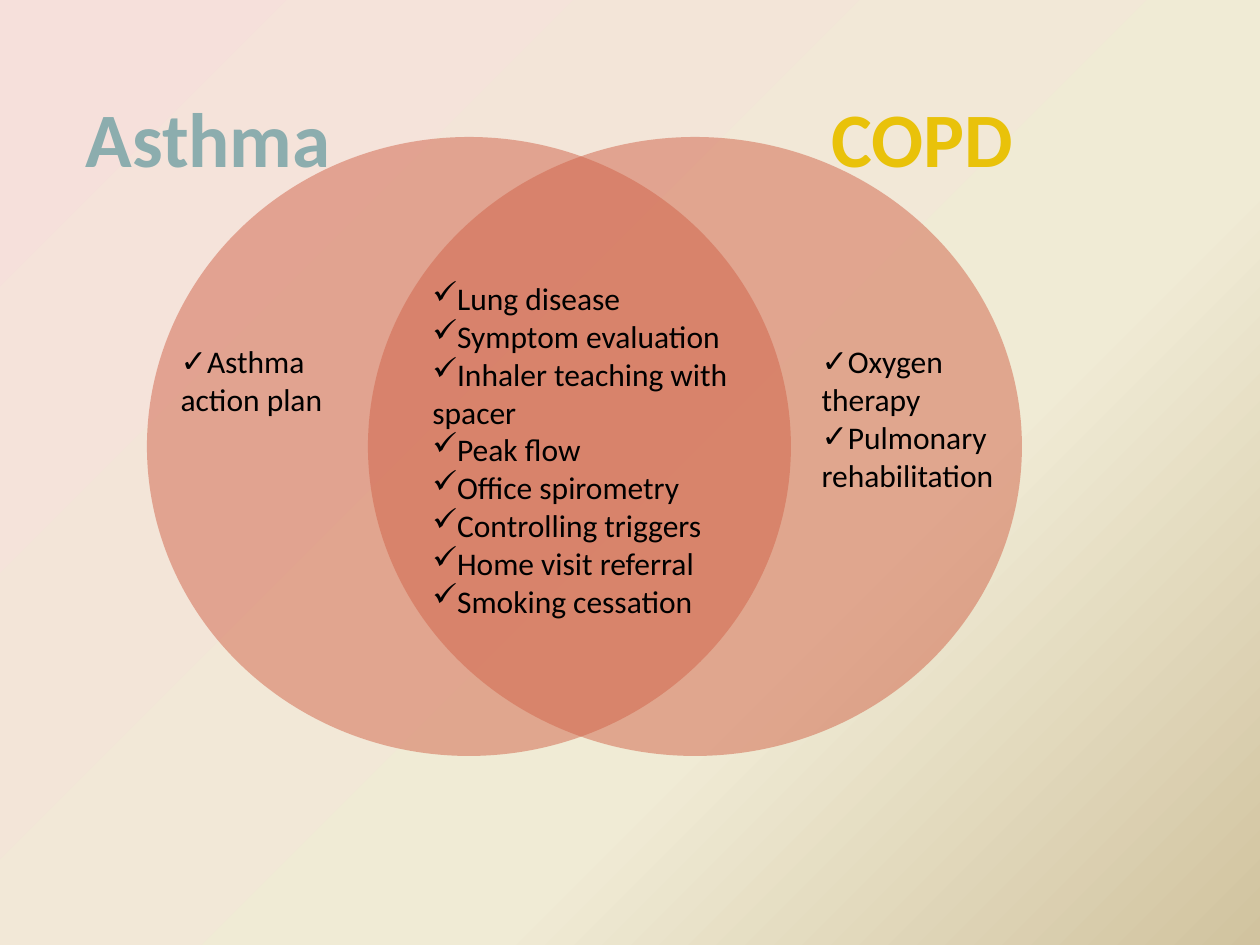
from copy import deepcopy
from dataclasses import dataclass

from lxml import etree
from pptx import Presentation
from pptx.dml.color import RGBColor
from pptx.enum import shapes, text
from pptx.oxml.ns import qn
from pptx.util import Emu, Pt

EMU_PER_PX = 914400 / 126
BLACK = RGBColor(0x00, 0x00, 0x00)
TEAL = RGBColor(0x8C, 0xAD, 0xAE)
GOLD = RGBColor(0xE9, 0xC2, 0x0A)
TERRACOTTA = RGBColor(0xD1, 0x63, 0x49)
BACKDROP = (
    (0, RGBColor(0xF6, 0xE0, 0xDB)),
    (0.65, RGBColor(0xF0, 0xEB, 0xD5)),
    (1, RGBColor(0xD1, 0xC3, 0x9F)),
)


@dataclass(frozen=True)
class Box:
    left: int
    top: int
    width: int
    height: int

    def emu(self) -> list[Emu]:
        lengths = (self.left, self.top, self.width, self.height)
        return [Emu(round(px * EMU_PER_PX)) for px in lengths]


@dataclass(frozen=True)
class Topic:
    circle: Box
    heading: str
    heading_box: Box
    color: RGBColor
    points: tuple[str, ...]
    points_box: Box
    heading_idx: int
    points_idx: int


TOPICS = (
    Topic(Box(147, 137, 644, 619), "Asthma", Box(73, 84, 294, 106), TEAL,
          ("Asthma action plan",), Box(168, 336, 179, 89), 1, 2),
    Topic(Box(368, 137, 654, 619), "COPD", Box(819, 84, 294, 106), GOLD,
          ("Oxygen therapy", "Pulmonary rehabilitation"),
          Box(809, 336, 199, 165), 3, 4),
)
SHARED_POINTS = (
    "Lung disease", "Symptom evaluation", "Inhaler teaching with spacer",
    "Peak flow", "Office spirometry", "Controlling triggers",
    "Home visit referral", "Smoking cessation",
)
SHARED_BOX = Box(420, 273, 325, 357)


def paint_background(slide) -> None:
    fill = slide.background.fill
    fill.gradient()
    stop_list = slide.element.xpath(".//a:gsLst")[0]
    stop_list.append(deepcopy(stop_list[0]))
    for stop, (position, color) in zip(fill.gradient_stops, BACKDROP):
        stop.position = position
        stop.color.rgb = color
    fill.gradient_angle = 315


def draw_circle(slide, box: Box, layer: int) -> None:
    circle = slide.shapes.add_shape(shapes.MSO_SHAPE.OVAL, *box.emu())
    circle.shadow.inherit = False
    circle.fill.solid()
    circle.fill.fore_color.rgb = TERRACOTTA
    circle.line.fill.background()
    tint = circle.element.spPr.find(f"{qn('a:solidFill')}/{qn('a:srgbClr')}")
    etree.SubElement(tint, qn("a:alpha"), val="50000")
    slide.shapes.element.insert(2 + layer, circle.element)


def write(holder, box: Box, lines: tuple[str, ...], *, size: int = 18,
          color: RGBColor = BLACK, bold: bool = False,
          bullet: str = "") -> None:
    holder.left, holder.top, holder.width, holder.height = box.emu()
    frame = holder.text_frame
    frame.text = "\n".join(lines)
    frame.word_wrap = True
    frame.auto_size = text.MSO_AUTO_SIZE.SHAPE_TO_FIT_TEXT
    frame.vertical_anchor = text.MSO_ANCHOR.TOP
    for paragraph in frame.paragraphs:
        paragraph.alignment = text.PP_ALIGN.LEFT
        paragraph.space_before = paragraph.space_after = Pt(0)
        properties = paragraph._p.get_or_add_pPr()
        properties.set("marL", "0")
        properties.set("indent", "0")
        if bullet:
            etree.SubElement(properties, qn("a:buChar"), char=bullet)
        else:
            etree.SubElement(properties, qn("a:buNone"))
        for run in paragraph.runs:
            run.font.name = "Calibri"
            run.font.size = Pt(size)
            run.font.bold = bold
            run.font.color.rgb = color


def main() -> None:
    deck = Presentation()
    deck.slide_width, deck.slide_height = Box(0, 0, 1260, 945).emu()[2:]
    slide = deck.slides.add_slide(deck.slide_layouts.get_by_name("Comparison"))
    paint_background(slide)
    unused_title = slide.shapes.title.element
    unused_title.getparent().remove(unused_title)
    holders = {holder.placeholder_format.idx: holder
               for holder in slide.placeholders}
    for layer, topic in enumerate(TOPICS):
        draw_circle(slide, topic.circle, layer)
        write(holders[topic.heading_idx], topic.heading_box, (topic.heading,),
              size=44, color=topic.color, bold=True)
        write(holders[topic.points_idx], topic.points_box, topic.points,
              bullet="✓")
    shared = slide.shapes.add_textbox(*SHARED_BOX.emu())
    write(shared, SHARED_BOX, SHARED_POINTS, bullet="✓")
    deck.save("out.pptx")


if __name__ == "__main__":
    main()
